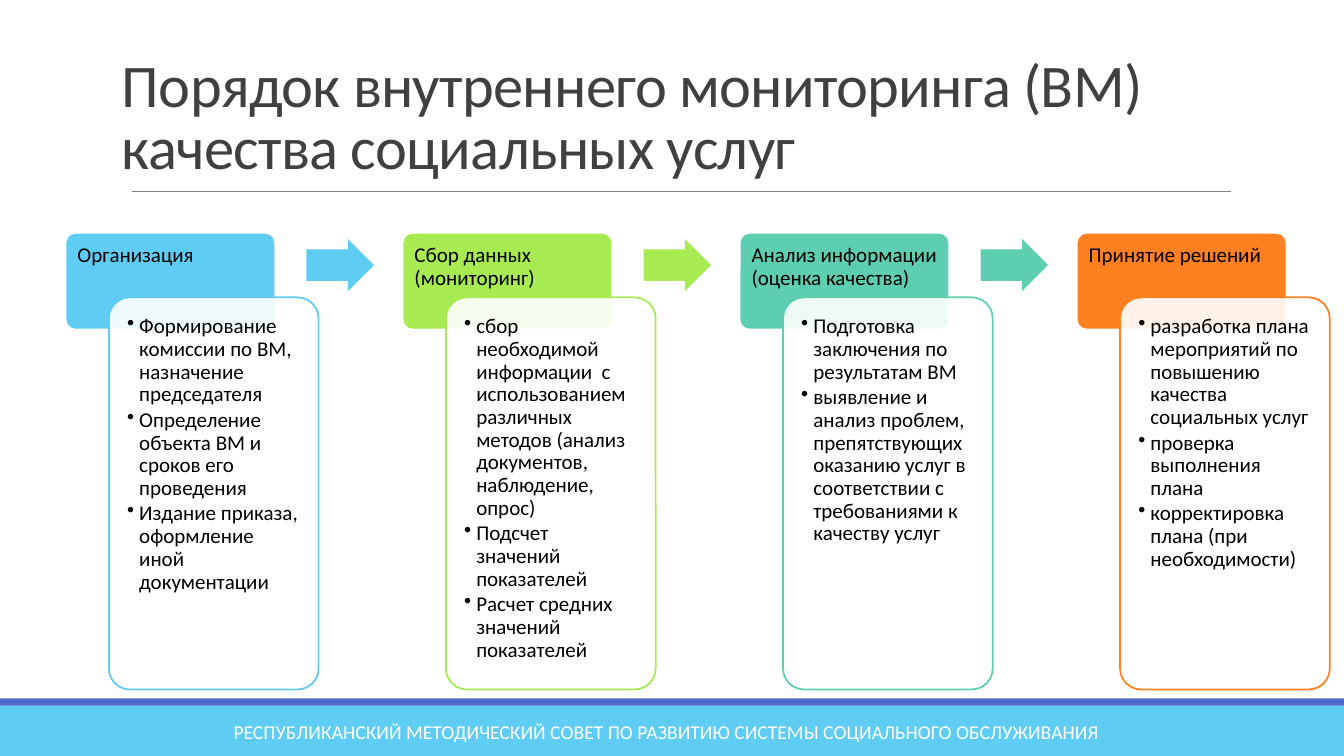
import pptx
import pptx.util
import pptx.dml.color
import pptx.enum.shapes
import pptx.enum.text
import pptx.oxml.ns
from lxml import etree

Inches = pptx.util.Inches
Pt = pptx.util.Pt
SHAPE = pptx.enum.shapes.MSO_SHAPE
ALIGN = pptx.enum.text.PP_ALIGN
ANCHOR = pptx.enum.text.MSO_ANCHOR
qn = pptx.oxml.ns.qn

FONT = "Calibri"
COLORS = {
    "blue": "5ECCF3", "green": "A7EA52", "teal": "5DCEAF", "orange": "FF8021",
    "indigo": "4E67C8", "title": "404040", "rule": "808080",
    "black": "000000", "white": "FFFFFF",
}
STEPS = [
    ("blue", "Организация", [
        "Формирование комиссии по ВМ, назначение председателя",
        "Определение объекта ВМ и сроков его проведения",
        "Издание приказа, оформление иной документации"]),
    ("green", "Сбор данных (мониторинг)", [
        "сбор необходимой информации  с использованием различных методов "
        "(анализ документов, наблюдение, опрос)",
        "Подсчет значений показателей",
        "Расчет средних значений показателей"]),
    ("teal", "Анализ информации (оценка качества)", [
        "Подготовка заключения по результатам ВМ",
        "выявление и анализ проблем, препятствующих оказанию услуг в "
        "соответствии с требованиями к качеству услуг"]),
    ("orange", "Принятие решений", [
        "разработка плана мероприятий по повышению качества социальных услуг",
        "проверка выполнения плана",
        "корректировка плана (при необходимости)"]),
]
STEP_PITCH = 3.343


def rgb(name):
    return pptx.dml.color.RGBColor.from_string(COLORS[name])


def add_block(s, kind, box, fill, line=None):
    sp = s.shapes.add_shape(kind, *map(Inches, box))
    sp.shadow.inherit = False
    sp.fill.solid()
    sp.fill.fore_color.rgb = rgb(fill)
    if line:
        sp.line.color.rgb = rgb(line)
        sp.line.width = Pt(1.25)
    else:
        sp.line.fill.background()
    return sp


def write(sp, paragraphs, size, color, align=ALIGN.LEFT, anchor=ANCHOR.TOP,
          spacing=None, inset=None):
    tf = sp.text_frame
    tf.word_wrap = True
    tf.auto_size = pptx.enum.text.MSO_AUTO_SIZE.NONE
    tf.vertical_anchor = anchor
    if inset:
        tf.margin_left = tf.margin_right = tf.margin_top = Inches(inset)
        tf.margin_bottom = Inches(0.06)
    for i, text in enumerate(paragraphs):
        p = tf.paragraphs[0] if i == 0 else tf.add_paragraph()
        p.text = text
        p.alignment = align
        if spacing:
            p.line_spacing = spacing
        for r in p.runs:
            r.font.name = FONT
            r.font.size = Pt(size)
            r.font.color.rgb = rgb(color)
    return tf


def add_bullets(tf):
    for p in tf.paragraphs:
        p.space_after = Pt(2)
        pPr = p._p.get_or_add_pPr()
        pPr.set("marL", str(Inches(0.12)))
        pPr.set("indent", str(-Inches(0.12)))
        etree.SubElement(pPr, qn("a:buChar")).set("char", "•")


def add_title(s, left, top, width, height):
    title = s.shapes.title
    title.left, title.top = Inches(left), Inches(top)
    title.width, title.height = Inches(width), Inches(height)
    tf = write(title, ["Порядок внутреннего мониторинга (ВМ) качества социальных услуг"],
               43.2, "title", anchor=ANCHOR.BOTTOM, spacing=0.85)
    tf.paragraphs[0].runs[0].font._element.set("spc", "-50")

    y = Inches(top + height + 0.05)
    rule = s.shapes.add_connector(pptx.enum.shapes.MSO_CONNECTOR.STRAIGHT,
                                  Inches(left + 0.2), y, Inches(left + width + 0.1), y)
    rule.line.color.rgb = rgb("rule")
    rule.line.width = Pt(0.5)
    etree.SubElement(rule._element.spPr, qn("a:effectLst"))


def add_step(s, left, top, color, heading, points, has_next):
    """Coloured heading, overlapping list card and an arrow to the next step."""
    width = 2.08
    head = add_block(s, SHAPE.ROUNDED_RECTANGLE, (left, top, width, 0.96), color, "white")
    head.adjustments[0] = 0.1
    write(head, [heading], 15, "black", spacing=0.9, inset=0.09)

    card = add_block(s, SHAPE.ROUNDED_RECTANGLE,
                     (left + 0.43, top + 0.64, width, 3.89), "white", color)
    card.adjustments[0] = 0.1
    fill = card._element.spPr.find(qn("a:solidFill"))
    etree.SubElement(fill[0], qn("a:alpha")).set("val", "90000")
    add_bullets(write(card, points, 15, "black", spacing=0.9, inset=0.12))

    if has_next:
        arrow = add_block(s, SHAPE.RIGHT_ARROW, (left + 2.39, top + 0.06, 0.67, 0.52), color)
        arrow.adjustments[0] = 0.6
        arrow.adjustments[1] = 0.5


def add_footer(s, left, top, width, height):
    add_block(s, SHAPE.RECTANGLE, (left, top, width, height), "blue")
    add_block(s, SHAPE.RECTANGLE, (left, top - 0.07, width, 0.07), "indigo")
    label = s.shapes.add_textbox(Inches(left + 1.6), Inches(top + 0.06),
                                 Inches(10.02), Inches(0.4))
    write(label, ["РЕСПУБЛИКАНСКИЙ МЕТОДИЧЕСКИЙ СОВЕТ ПО РАЗВИТИЮ СИСТЕМЫ "
                  "СОЦИАЛЬНОГО ОБСЛУЖИВАНИЯ"],
          14, "white", ALIGN.CENTER, ANCHOR.MIDDLE)


def main():
    prs = pptx.Presentation()
    prs.slide_width, prs.slide_height = Inches(13.33), Inches(7.5)
    s = prs.slides.add_slide(prs.slide_layouts[5])
    add_footer(s, 0, 7, 13.33, 0.5)
    add_title(s, 1.11, 0.67, 11, 1.18)
    for i, (color, heading, points) in enumerate(STEPS):
        add_step(s, 0.65 + i * STEP_PITCH, 2.31, color, heading, points,
                 i < len(STEPS) - 1)
    prs.save("out.pptx")


if __name__ == "__main__":
    main()
